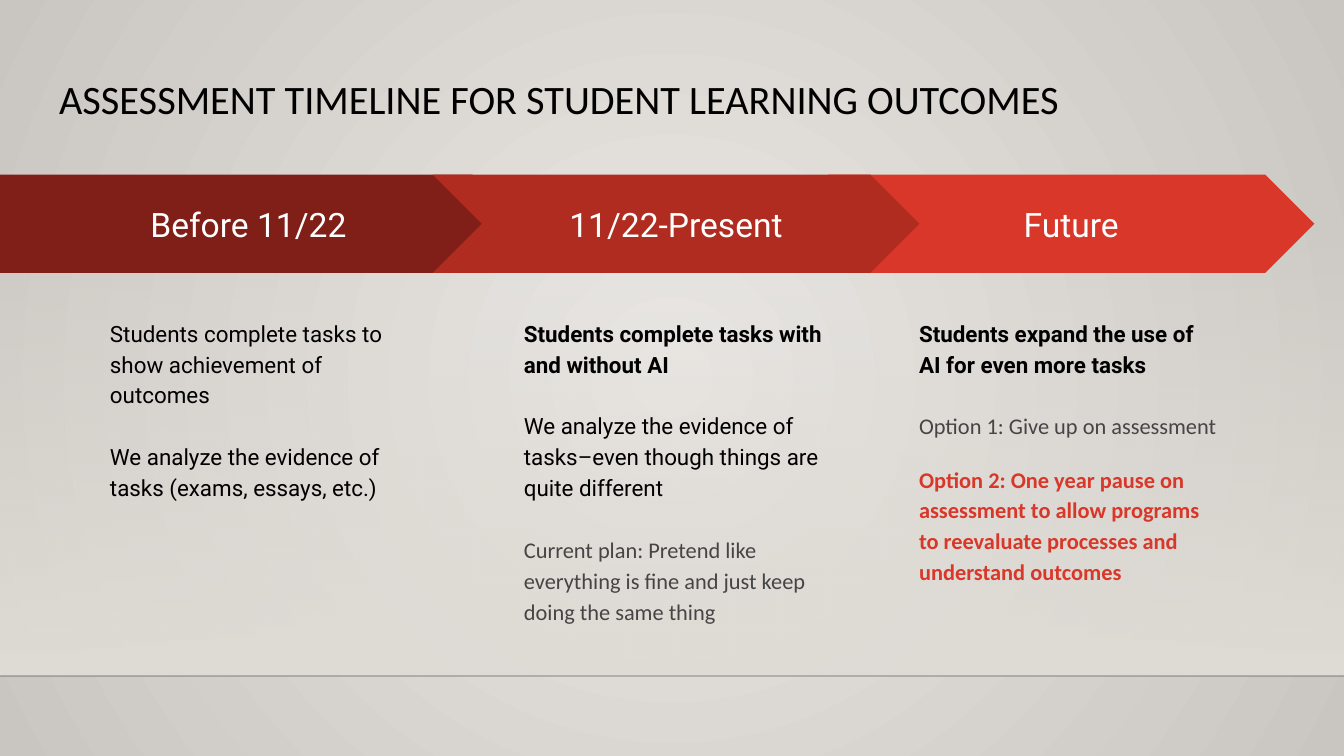
from lxml import etree
from pptx import Presentation
from pptx.dml.color import RGBColor
from pptx.enum.shapes import MSO_CONNECTOR, MSO_SHAPE
from pptx.enum.text import MSO_ANCHOR, PP_ALIGN
from pptx.oxml import parse_xml
from pptx.oxml.ns import nsdecls, qn
from pptx.util import Inches, Pt

CHEVRON, PENTAGON = MSO_SHAPE.CHEVRON, MSO_SHAPE.PENTAGON
MIDDLE, TOP = MSO_ANCHOR.MIDDLE, MSO_ANCHOR.TOP
LEFT, CENTER = PP_ALIGN.LEFT, PP_ALIGN.CENTER

COLORS = {
    "black": "000000", "white": "FFFFFF", "gray": "454545", "rule": "000001",
    "dark": "801F17", "medium": "B02B20", "bright": "D83729",
    "glow": "EBE9E6", "edge": "C9C5C0", "floor": "DFDBD5",
}
# style: font, color, bold
STYLES = {
    "plain": ("Roboto", "black", False),
    "strong": ("Roboto", "black", True),
    "option": ("Calibri", "gray", False),
    "choice": ("Calibri", "bright", True),
}
TITLE = "ASSESSMENT TIMELINE FOR STUDENT LEARNING OUTCOMES"
LINE_GAP = 16.5
# paragraphs: text, style, points before
BEFORE = ("Before 11/22", "dark", [
    ("Students complete tasks to show achievement of outcomes", "plain", 0),
    ("We analyze the evidence of tasks (exams, essays, etc.)", "plain", LINE_GAP),
])
PRESENT = ("11/22-Present", "medium", [
    ("Students complete tasks with and without AI", "strong", 0),
    ("We analyze the evidence of tasks–even though things are quite different",
     "plain", LINE_GAP),
    ("Current plan: Pretend like everything is fine and just keep doing the same thing",
     "option", LINE_GAP),
])
FUTURE = ("Future", "bright", [
    ("Students expand the use of AI for even more tasks", "strong", 0),
    ("Option 1: Give up on assessment", "option", LINE_GAP),
    ("Option 2: One year pause on assessment to allow programs to reevaluate "
     "processes and understand outcomes", "choice", 12),
])

SLIDE_W = 10
SLIDE_H = SLIDE_W * 9 / 16
FLOOR_Y = 5.03
ARROW_Y, ARROW_H = 1.3, 0.73
CHEVRON_X, CHEVRON_W, CHEVRON_STEP = 3.22, 3.62, 2.94
DETAIL_Y, DETAIL_W, DETAIL_H = 2.25, 2.43, 2.86


def rgb(name):
    return RGBColor.from_string(COLORS[name])


def set_gradient(parent, stops, direction):
    """Swap the solid fill in parent for a gradient of (percent, color, opacity) stops."""
    stop_xml = "".join(
        f'<a:gs pos="{pos * 1000}"><a:srgbClr val="{COLORS[color]}">'
        f'<a:alpha val="{opacity * 1000}"/></a:srgbClr></a:gs>'
        for pos, color, opacity in stops)
    gradient = parse_xml(f'<a:gradFill {nsdecls("a")} rotWithShape="1">'
                         f'<a:gsLst>{stop_xml}</a:gsLst>{direction}</a:gradFill>')
    parent.replace(parent.find(qn("a:solidFill")), gradient)


def prepare_frame(shape, anchor):
    frame = shape.text_frame
    frame.word_wrap = True
    frame.vertical_anchor = anchor
    frame.margin_left = frame.margin_right = Inches(0.1)
    frame.margin_top = frame.margin_bottom = Inches(0.1)
    return frame


def add_run(paragraph, text, font, size, color, bold=False):
    run = paragraph.add_run()
    run.text = text
    run.font.name, run.font.size, run.font.bold = font, Pt(size), bold
    run.font.color.rgb = rgb(color)


def add_backdrop(slide):
    slide.background.fill.solid()
    set_gradient(slide.element.find(".//" + qn("p:bgPr")),
                 [(0, "glow", 100), (100, "edge", 100)],
                 '<a:path path="circle"><a:fillToRect l="50000" t="50000" '
                 'r="50000" b="50000"/></a:path>')

    wall_top = 1.66
    wall = slide.shapes.add_shape(MSO_SHAPE.RECTANGLE, 0, Inches(wall_top),
                                  Inches(SLIDE_W), Inches(FLOOR_Y - wall_top))
    wall.shadow.inherit = False
    wall.line.fill.background()
    wall.fill.solid()
    set_gradient(wall.element.spPr, [(0, "floor", 0), (100, "floor", 100)],
                 '<a:lin ang="5400000" scaled="0"/>')

    rule = slide.shapes.add_connector(MSO_CONNECTOR.STRAIGHT, 0, Inches(FLOOR_Y),
                                      Inches(SLIDE_W), Inches(FLOOR_Y))
    rule.line.width = Pt(1)
    rule.line.color.rgb = rgb("rule")
    properties = rule._element.spPr
    rule_color = properties.find(".//" + qn("a:srgbClr"))
    etree.SubElement(rule_color, qn("a:alpha")).set("val", "20000")
    etree.SubElement(properties, qn("a:effectLst"))


def add_title(slide):
    title = slide.shapes.title
    title.left, title.top = Inches(0.34), Inches(0.49)
    title.width, title.height = Inches(9.32), Inches(0.63)
    paragraph = prepare_frame(title, TOP).paragraphs[0]
    paragraph.alignment = LEFT
    paragraph.line_spacing = 0.9
    add_run(paragraph, TITLE, "Calibri", 21.6, "black")


def add_stage(slide, stage, outline, arrow_x, arrow_w, detail_x):
    label, color, details = stage
    arrow = slide.shapes.add_shape(outline, Inches(arrow_x), Inches(ARROW_Y),
                                   Inches(arrow_w), Inches(ARROW_H))
    arrow.adjustments[0] = 0.5
    arrow.shadow.inherit = False
    arrow.fill.solid()
    arrow.fill.fore_color.rgb = rgb(color)
    arrow.line.fill.background()
    heading = prepare_frame(arrow, MIDDLE).paragraphs[0]
    heading.alignment = CENTER
    add_run(heading, label, "Roboto", 18, "white")

    box = slide.shapes.add_textbox(Inches(detail_x), Inches(DETAIL_Y),
                                   Inches(DETAIL_W), Inches(DETAIL_H))
    frame = prepare_frame(box, TOP)
    for i, (text, style, gap) in enumerate(details):
        paragraph = frame.add_paragraph() if i else frame.paragraphs[0]
        paragraph.line_spacing = 1.15
        if gap:
            paragraph.space_before = Pt(gap)
        font, text_color, bold = STYLES[style]
        add_run(paragraph, text, font, 12, text_color, bold)


def main():
    deck = Presentation()
    deck.slide_width, deck.slide_height = Inches(SLIDE_W), Inches(SLIDE_H)
    slide = deck.slides.add_slide(deck.slide_layouts[5])
    add_backdrop(slide)
    add_title(slide)

    # The middle chevron comes last so that it covers the tip of the first arrow.
    add_stage(slide, BEFORE, PENTAGON, 0, 3.88, 0.72)
    for step, stage in ((1, FUTURE), (0, PRESENT)):
        x = CHEVRON_X + step * CHEVRON_STEP
        add_stage(slide, stage, CHEVRON, x, CHEVRON_W, x + 0.58)
    deck.save("out.pptx")


if __name__ == "__main__":
    main()
